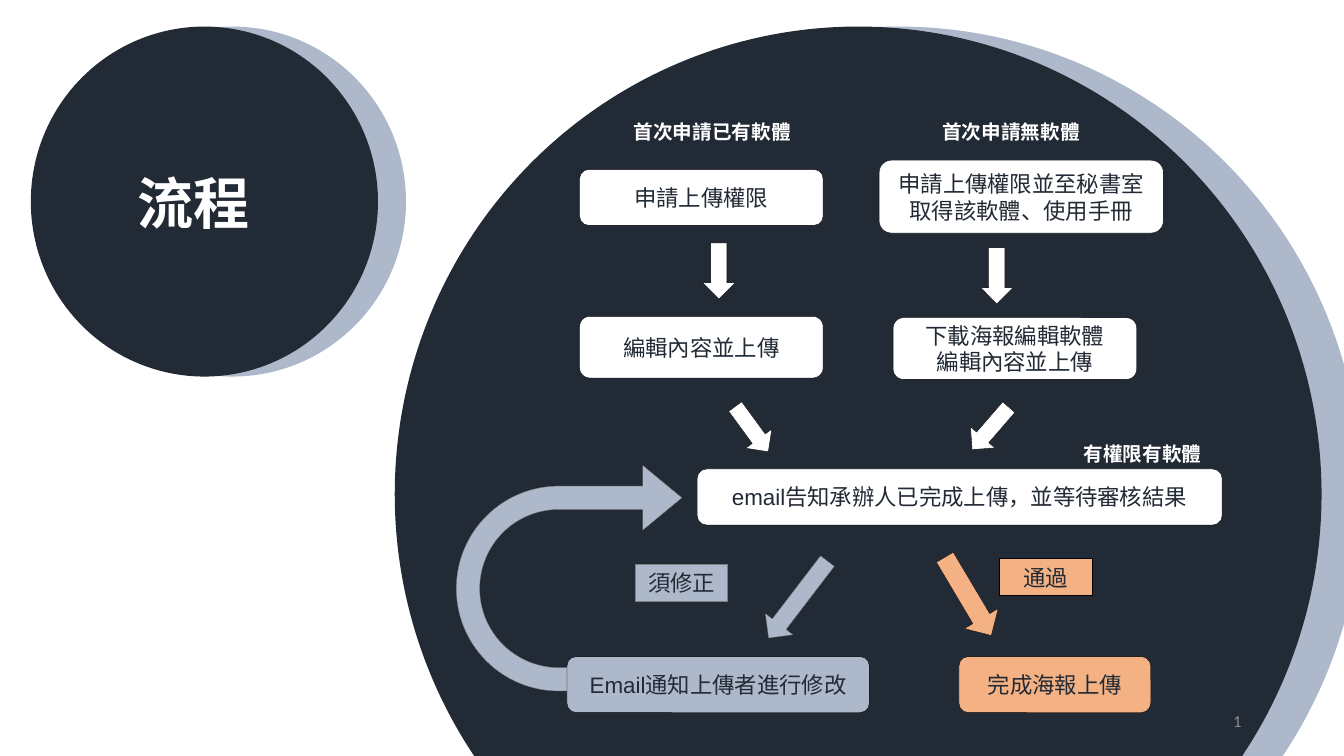
import pptx
import pptx.util
import pptx.dml.color
import pptx.enum.shapes
import pptx.enum.text
import lxml.etree

Pt = pptx.util.Pt
KIND = pptx.enum.shapes.MSO_SHAPE
ALIGN = pptx.enum.text.PP_ALIGN
ANCHOR = pptx.enum.text.MSO_ANCHOR
FIT = pptx.enum.text.MSO_AUTO_SIZE

NAVY, MIST, PEACH, WHITE = "222A35", "ADB9CA", "F4B183", "FFFFFF"
BLACK, GRAY = "000000", "808080"


def paint(color, code):
    color.rgb = pptx.dml.color.RGBColor.from_string(code)


def style(para, size, face, code, bold=False, align=ALIGN.LEFT):
    para.alignment = align
    para.font.size, para.font.name, para.font.bold = Pt(size), face, bold
    paint(para.font.color, code)


def draw(slide, kind, box, fill, line=None, width=0.25, turn=0):
    shape = slide.shapes.add_shape(kind, *map(Pt, box))
    shape.shadow.inherit = False
    shape.rotation = turn
    shape.fill.solid()
    paint(shape.fill.fore_color, fill)
    if line:
        paint(shape.line.color, line)
        shape.line.width = Pt(width)
    else:
        shape.line.fill.background()
    return shape


def node(slide, box, text, fill=WHITE, kind=KIND.ROUNDED_RECTANGLE,
         line=BLACK, width=0.25):
    frame = draw(slide, kind, box, fill, line, width).text_frame
    frame.text = text
    frame.word_wrap = True
    frame.vertical_anchor = ANCHOR.MIDDLE
    for para in frame.paragraphs:
        style(para, 16, "Arial", NAVY, align=ALIGN.CENTER)


def note(slide, box, text):
    frame = slide.shapes.add_textbox(*map(Pt, box)).text_frame
    frame.text = text
    frame.word_wrap = True
    style(frame.paragraphs[0], 14, "Calibri", WHITE, bold=True)


def discs(slide, small, large):
    """Two dark discs, each with a pale one behind it."""
    for (x, y, w, h), shift in ((small, 20), (large, 29)):
        draw(slide, KIND.OVAL, (x + shift, y, w, h), MIST)
    for box in (large, small):
        draw(slide, KIND.OVAL, box, NAVY)


def head(slide, box):
    """Title inside the small disc."""
    x, y, w, h = box
    title = slide.shapes.title
    title.left, title.top = Pt(x + 69), Pt(y + 98)
    title.width, title.height = Pt(95), Pt(55)
    frame = title.text_frame
    frame.text = "流程"
    frame.word_wrap = False
    frame.auto_size = FIT.NONE
    frame.vertical_anchor = ANCHOR.TOP
    style(frame.paragraphs[0], 40, "Calibri", WHITE, bold=True)
    # Bring the title in front of the discs
    slide.shapes.element.append(title.element)


def flow(slide, box):
    """Flow chart inside the large disc."""
    left, top = box[:2]

    def at(x, y, w, h):
        return left + x, top + y, w, h

    # Loop back from the revision step
    loop = draw(slide, KIND.U_TURN_ARROW, at(44, 313.5, 161, 161), MIST,
                GRAY, turn=270)
    for i, ratio in enumerate((0.103, 0.143, 0.173, 0.467, 1)):
        loop.adjustments[i] = ratio

    # Steps
    for place, text, fill in (
            ((132, 102, 174, 40), "申請上傳權限", WHITE),
            ((132, 207, 174, 44), "編輯內容並上傳", WHITE),
            ((346, 95.5, 203, 52), "申請上傳權限並至秘書室取得該軟體、使用手冊", WHITE),
            ((356, 208, 174, 44), "下載海報編輯軟體\n編輯內容並上傳", WHITE),
            ((216, 316, 375, 40), "email告知承辦人已完成上傳，並等待審核結果", WHITE),
            ((123, 450, 216, 40), "Email通知上傳者進行修改", MIST),
            ((403, 450, 137, 40), "完成海報上傳", PEACH)):
        node(slide, at(*place), text, fill)

    # White arrows between the steps
    for x, y, turn in ((220, 154.5, 0), (243.5, 267.5, 323.8),
                       (418.5, 158, 0), (414, 267, 40.9)):
        draw(slide, KIND.DOWN_ARROW, at(x, y, 23, 40), WHITE, BLACK, turn=turn)

    # Outcome arrows and their tags
    draw(slide, KIND.RIGHT_ARROW, at(377, 393, 65, 28), PEACH, "0D0D0D",
         turn=59.3)
    draw(slide, KIND.RIGHT_ARROW, at(253.5, 397, 69, 24.5), MIST, GRAY,
         turn=127.4)
    node(slide, at(432, 380, 66, 26.5), "通過", PEACH, KIND.RECTANGLE)
    node(slide, at(172, 384, 66, 26.5), "須修正", MIST, KIND.RECTANGLE,
         GRAY, 0.75)

    # Entry points
    for x, y, w, text in ((163.5, 63, 142, "首次申請已有軟體"),
                          (384, 63, 120, "首次申請無軟體"),
                          (485, 293, 100, "有權限有軟體")):
        note(slide, at(x, y, w, 24.5), text)


def count(slide, box):
    """Slide number as a live field."""
    frame = slide.shapes.add_textbox(*map(Pt, box)).text_frame
    frame.word_wrap = True
    frame.vertical_anchor = ANCHOR.MIDDLE
    para = frame.paragraphs[0]
    run = para.add_run()
    run.text = "1"
    run.font.size, run.font.name = Pt(12), "Calibri"
    paint(run.font.color, "8C8C8C")
    para.alignment = ALIGN.RIGHT
    # Turn the run into a field
    item = para.runs[0].font._element.getparent()
    item.tag = lxml.etree.QName(item.nsmap["a"], "fld").text
    item.set("id", "{B6F15528-21DE-4FAA-801E-634DDDAF4B2B}")
    item.set("type", "slidenum")


def main():
    deck = pptx.Presentation()
    deck.slide_width, deck.slide_height = Pt(960), Pt(540)
    slide = deck.slides.add_slide(deck.slide_layouts.get_by_name("Title Only"))
    small, large = (22, 19, 248, 250), (282, 19, 662, 668)
    discs(slide, small, large)
    head(slide, small)
    flow(slide, large)
    count(slide, (678, 500.5, 216, 29))
    deck.save("out.pptx")


if __name__ == "__main__":
    main()
